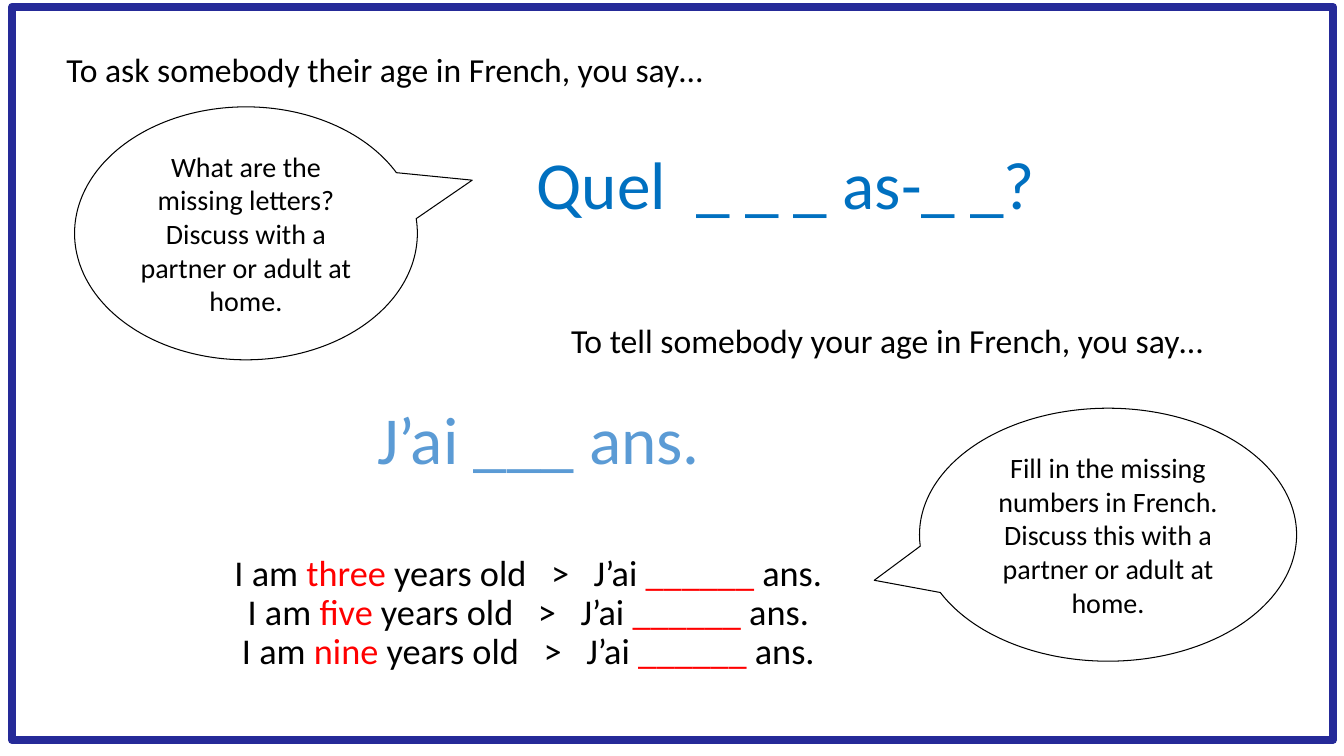
from dataclasses import dataclass

from pptx import Presentation
from pptx.dml.color import RGBColor
from pptx.enum.shapes import MSO_SHAPE
from pptx.enum.text import MSO_ANCHOR, MSO_AUTO_SIZE, PP_ALIGN
from pptx.shapes.autoshape import Shape
from pptx.slide import Slide
from pptx.util import Inches, Pt

BLACK = RGBColor(0x00, 0x00, 0x00)
RED = RGBColor(0xFF, 0x00, 0x00)
NAVY = RGBColor(0x25, 0x2A, 0x98)
BLUE = RGBColor(0x00, 0x70, 0xC0)
LIGHT_BLUE = RGBColor(0x5B, 0x9B, 0xD5)
FONT = "Calibri"


@dataclass(frozen=True)
class Box:
    left: float
    top: float
    width: float
    height: float

    def lengths(self) -> tuple[int, ...]:
        return tuple(Inches(v) for v in (self.left, self.top, self.width, self.height))


@dataclass(frozen=True)
class Run:
    text: str
    color: RGBColor = BLACK
    tracking: float = 0  # extra points after each character


@dataclass(frozen=True)
class TextBlock:
    box: Box
    paragraphs: list[list[Run]]
    size: float
    align: PP_ALIGN = PP_ALIGN.CENTER
    anchor: MSO_ANCHOR = MSO_ANCHOR.MIDDLE
    line_spacing: float = 0.9


@dataclass(frozen=True)
class Callout:
    box: Box
    tail: tuple[float, float]
    text: str


def age_line(number: str) -> list[Run]:
    return [Run("I am "), Run(number, RED), Run(" years old"), Run(" >", tracking=11.7),
            Run(" J’ai "), Run("______", RED), Run(" ans.")]


TITLE = TextBlock(
    Box(2.12, 1.23, 11.5, 1.27),
    [[Run("Quel", BLUE), Run(" ", BLUE, tracking=10.8), Run("_ _ _ as-_ _? ", BLUE)]], 48)

TEXT_BLOCKS = [
    TextBlock(Box(0.56, 0.44, 10.98, 0.5),
              [[Run("To ask somebody their age in French, you say…")]],
              24, PP_ALIGN.LEFT, MSO_ANCHOR.TOP, 1.0),
    TextBlock(Box(4.67, 3.12, 7.36, 0.5),
              [[Run("To tell somebody your age in French, you say…")]],
              24, PP_ALIGN.RIGHT, MSO_ANCHOR.TOP, 1.0),
    TextBlock(Box(2.63, 3.67, 5.43, 1.45), [[Run("J’ai ___ ans.", LIGHT_BLUE)]], 48),
    TextBlock(Box(1.7, 5.15, 7.08, 1.88),
              [age_line(number) for number in ("three", "five", "nine")], 25.9),
]

CALLOUTS = [
    Callout(Box(0.74, 1.06, 3.4, 2.51), (0.66, -0.21),
            "What are the missing letters? Discuss with a partner or adult at home."),
    Callout(Box(9.12, 4.05, 3.74, 2.51), (-0.62, 0.18),
            "Fill in the missing numbers in French. Discuss this with a partner or adult at home."),
]


def write_text(sp: Shape, block: TextBlock) -> None:
    tf = sp.text_frame
    tf.word_wrap = True
    tf.auto_size = MSO_AUTO_SIZE.NONE
    tf.vertical_anchor = block.anchor
    for i, runs in enumerate(block.paragraphs):
        p = tf.paragraphs[0] if i == 0 else tf.add_paragraph()
        p.alignment = block.align
        p.line_spacing = block.line_spacing
        p.space_before = Pt(0)
        for run in runs:
            r = p.add_run()
            r.text = run.text
            r.font.name = FONT
            r.font.size = Pt(block.size)
            r.font.color.rgb = run.color
            if run.tracking:
                r.font._element.set("spc", str(round(run.tracking * 100)))


def add_outline(s: Slide, kind: MSO_SHAPE, box: Box, color: RGBColor, weight: float) -> Shape:
    sp = s.shapes.add_shape(kind, *box.lengths())
    sp.shadow.inherit = False
    sp.fill.background()
    sp.line.color.rgb = color
    sp.line.width = Pt(weight)
    return sp


def add_callout(s: Slide, callout: Callout) -> None:
    sp = add_outline(s, MSO_SHAPE.OVAL_CALLOUT, callout.box, BLACK, 0.75)
    for i, offset in enumerate(callout.tail):
        sp.adjustments[i] = offset
    write_text(sp, TextBlock(callout.box, [[Run(callout.text)]], 20, line_spacing=1.0))


def main() -> None:
    prs = Presentation()
    prs.slide_width, prs.slide_height = Inches(13.33), Inches(7.5)
    s = prs.slides.add_slide(prs.slide_layouts[5])

    title = s.shapes.title
    title.left, title.top, title.width, title.height = TITLE.box.lengths()
    write_text(title, TITLE)

    add_outline(s, MSO_SHAPE.RECTANGLE, Box(0.12, 0.07, 13.1, 7.27), NAVY, 6)
    for block in TEXT_BLOCKS:
        write_text(s.shapes.add_textbox(*block.box.lengths()), block)
    for callout in CALLOUTS:
        add_callout(s, callout)

    prs.save("out.pptx")


if __name__ == "__main__":
    main()
